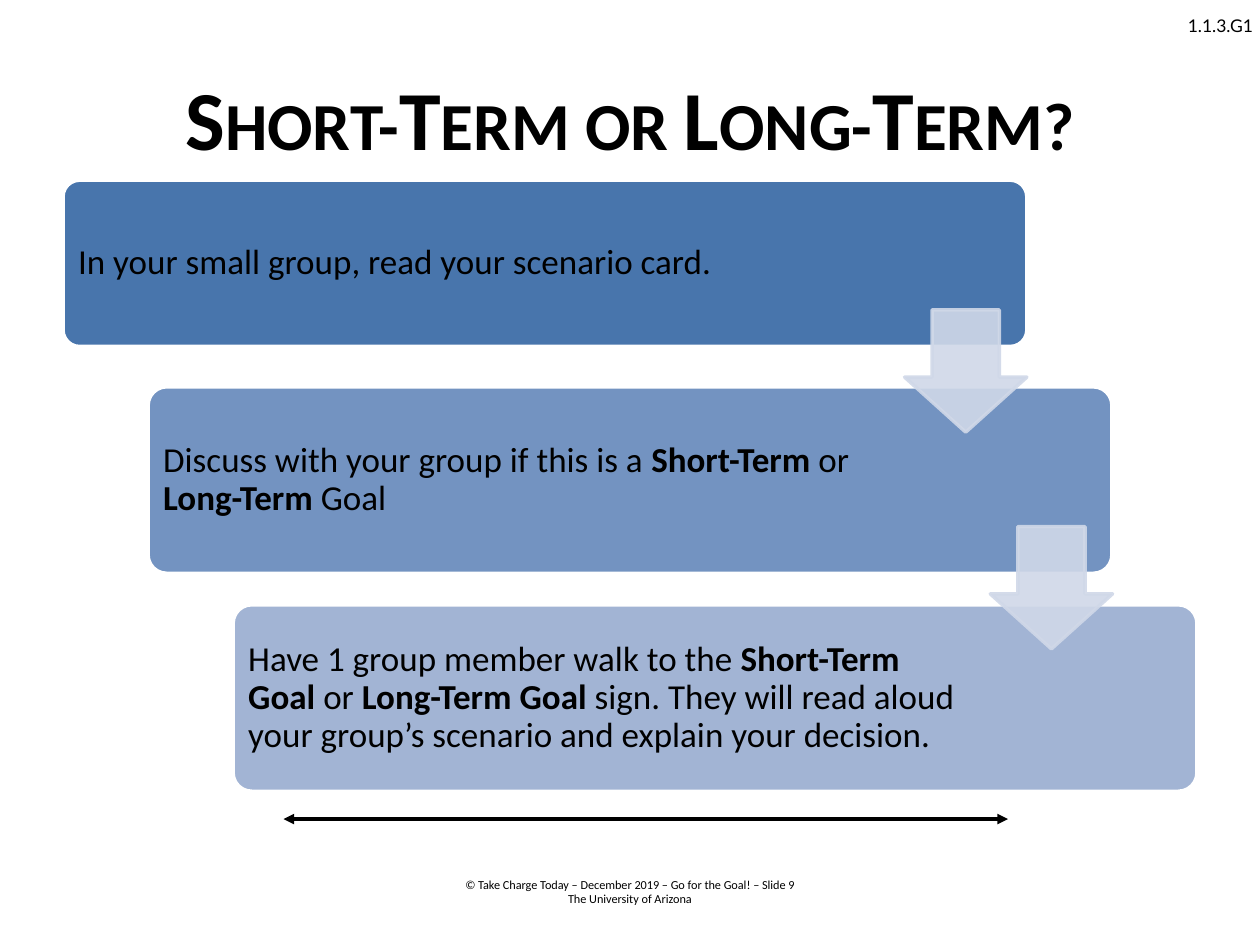
from dataclasses import dataclass

from lxml import etree
from pptx import Presentation
from pptx import util as u
from pptx.dml.color import RGBColor
from pptx.enum import shapes, text
from pptx.oxml.ns import qn

Inches = u.Inches
BLACK = "000000"
STEP_LEFT, STEP_SHIFT, STEP_WIDTH = 0.5, 0.675, 7.65


@dataclass
class Step:
    top: float
    height: float
    text_width: float
    fill: str
    words: list[tuple[str, bool]]


@dataclass
class Arrow:
    left: float
    top: float


STEPS = [
    Step(1.43, 1.32, 6.06, "4875AC",
         [("In your small group, read your scenario card.", False)]),
    Step(3.07, 1.48, 5.92, "7393C1",
         [("Discuss with your group if this is a ", False), ("Short-Term", True),
          (" or ", False), ("Long-Term", True), (" Goal", False)]),
    Step(4.8, 1.48, 5.92, "A2B4D4",
         [("Have 1 group member walk to the ", False), ("Short-Term Goal ", True),
          ("or ", False), ("Long-Term Goal", True),
          (" sign. They will read aloud your group’s scenario and explain your decision.",
           False)]),
]
ARROWS = [Arrow(7.18, 2.46), Arrow(7.86, 4.18)]


def colour(value: str) -> RGBColor:
    return RGBColor.from_string(value)


def add_text(page, left: float, top: float, width: float, height: float,
             lines: list[list[tuple[str, bool]]], *, size: float, font: str = "Calibri",
             align=text.PP_ALIGN.LEFT, anchor=text.MSO_ANCHOR.TOP, wrap: bool = True,
             inset: float | None = None, line_spacing: float | None = None,
             small_caps: bool = False) -> None:
    """Write lines of (words, bold) spans in a text box."""
    box = page.shapes.add_textbox(Inches(left), Inches(top), Inches(width), Inches(height))
    frame = box.text_frame
    frame.word_wrap = wrap
    frame.vertical_anchor = anchor
    if inset is not None:
        frame.margin_left = frame.margin_right = Inches(inset)
        frame.margin_top = frame.margin_bottom = Inches(inset)
    for index, line in enumerate(lines):
        para = frame.add_paragraph() if index else frame.paragraphs[0]
        para.alignment = align
        if line_spacing:
            para.line_spacing = line_spacing
        for words, bold in line:
            span = para.add_run()
            span.text = words
            span.font.name = font
            span.font.size = u.Pt(size)
            span.font.bold = bold
            span.font.color.rgb = colour(BLACK)
            if small_caps:
                span._r.get_or_add_rPr().set("cap", "small")


def add_block(page, kind, left: float, top: float, width: float, height: float, *,
              fill: str, line: str, adjust: list[float], alpha: int | None = None) -> None:
    """Draw a filled, outlined preset shape; alpha is a percentage."""
    block = page.shapes.add_shape(kind, Inches(left), Inches(top),
                                  Inches(width), Inches(height))
    block.shadow.inherit = False
    for index, value in enumerate(adjust):
        block.adjustments[index] = value
    block.fill.solid()
    block.fill.fore_color.rgb = colour(fill)
    block.line.color.rgb = colour(line)
    block.line.width = u.Pt(2)
    if alpha is not None:
        for tint in block._element.spPr.iter(qn("a:srgbClr")):
            etree.SubElement(tint, qn("a:alpha")).set("val", str(alpha * 1000))


def add_step(page, index: int, step: Step) -> None:
    left = STEP_LEFT + index * STEP_SHIFT
    add_block(page, shapes.MSO_SHAPE.ROUNDED_RECTANGLE, left, step.top, STEP_WIDTH,
              step.height, fill=step.fill, line="FFFFFF", adjust=[0.1])
    add_text(page, left + 0.04, step.top + 0.04, step.text_width, step.height - 0.08,
             [step.words], size=20, anchor=text.MSO_ANCHOR.MIDDLE, inset=0.08,
             line_spacing=0.9)


def add_double_arrow(page, start: float, end: float, top: float) -> None:
    line = page.shapes.add_connector(shapes.MSO_CONNECTOR.STRAIGHT, Inches(start),
                                     Inches(top), Inches(end), Inches(top))
    line.line.color.rgb = colour(BLACK)
    line.line.width = u.Pt(2)
    outline = line.line._get_or_add_ln()
    for end_name in ("a:headEnd", "a:tailEnd"):
        etree.SubElement(outline, qn(end_name)).set("type", "triangle")
    etree.SubElement(line._element.spPr, qn("a:effectLst"))


def main() -> None:
    deck = Presentation()
    deck.slide_width, deck.slide_height = Inches(10), Inches(7.5)
    page = deck.slides.add_slide(deck.slide_layouts[6])

    # Lesson code, footer and title
    add_text(page, 9.33, 0.07, 0.83, 0.27, [[("1.1.3.G1", False)]],
             size=10, font="Lato", wrap=False)
    add_text(page, 1.25, 6.91, 7.5, 0.34,
             [[("© Take Charge Today – December 2019 – Go for the Goal! – Slide 9", False)],
              [("The University of Arizona", False)]],
             size=7, align=text.PP_ALIGN.CENTER)
    add_text(page, 0.5, 0.3, 9, 1.25, [[("Short-Term or Long-Term?", True)]], size=48,
             align=text.PP_ALIGN.CENTER, anchor=text.MSO_ANCHOR.MIDDLE, small_caps=True)

    # Staircase of steps, then the arrows that join them
    for index, step in enumerate(STEPS):
        add_step(page, index, step)
    for arrow in ARROWS:
        add_block(page, shapes.MSO_SHAPE.DOWN_ARROW, arrow.left, arrow.top, 0.97, 0.97,
                  fill="D0D8E8", line="D0D8E8", adjust=[0.55, 0.45], alpha=90)

    # Walking line between the two signs
    add_double_arrow(page, 2.25, 8, 6.5)

    deck.save("out.pptx")


if __name__ == "__main__":
    main()
